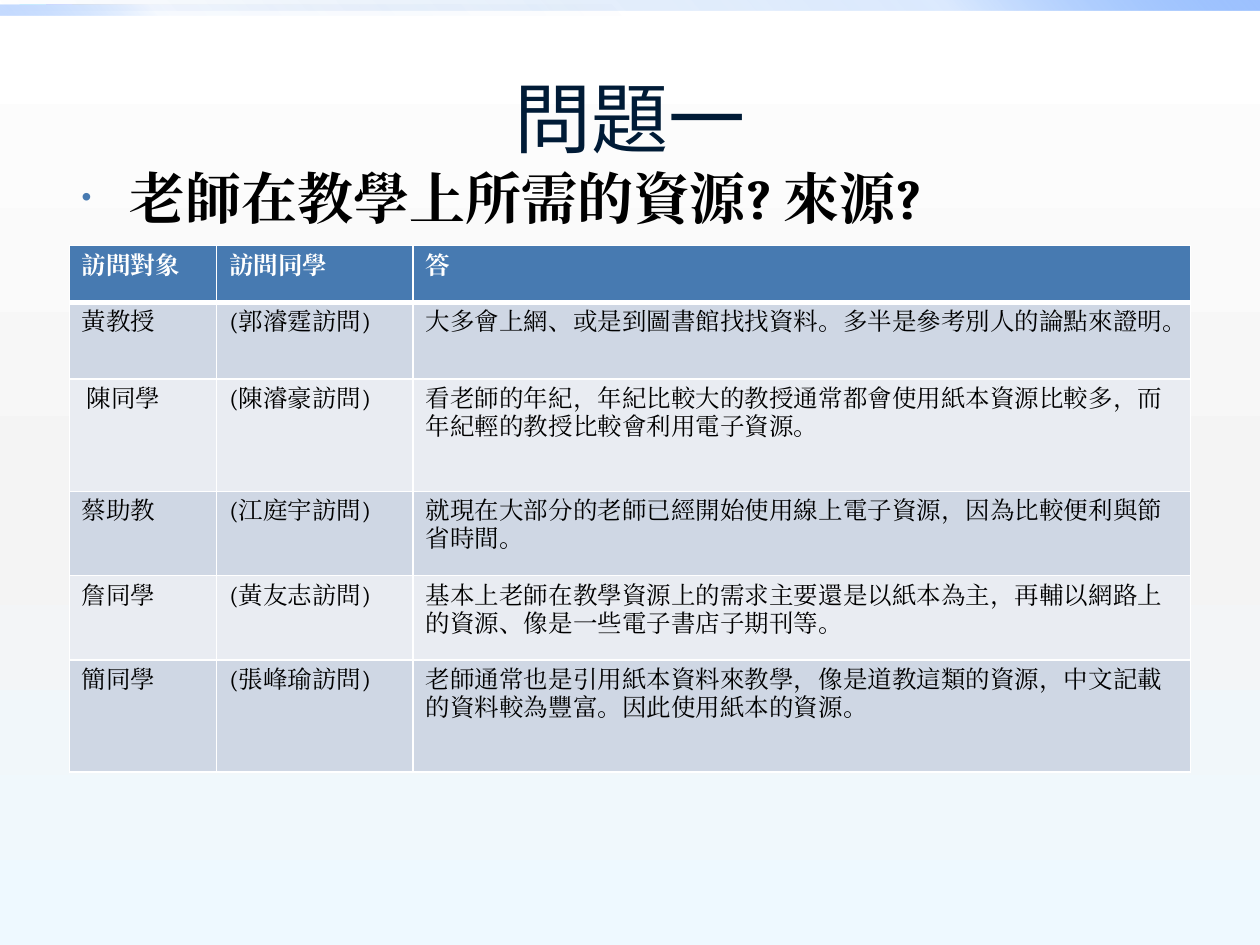
from lxml import etree
from pptx import Presentation
from pptx.dml.color import RGBColor
from pptx.enum import shapes, text
from pptx.oxml.ns import qn
from pptx.util import Inches, Pt

HEAD = ["訪問對象", "訪問同學", "答"]
ROWS = [
    ["黃教授", "(郭濬霆訪問)", "大多會上網、或是到圖書館找找資料。多半是參考別人的論點來證明。"],
    ["陳同學", "(陳濬豪訪問)", "看老師的年紀，年紀比較大的教授通常都會使用紙本資源比較多，而年紀輕的教授比較會利用電子資源。"],
    ["蔡助教", "(江庭宇訪問)", "就現在大部分的老師已經開始使用線上電子資源，因為比較便利與節省時間。"],
    ["詹同學", "(黃友志訪問)", "基本上老師在教學資源上的需求主要還是以紙本為主，再輔以網路上的資源、像是一些電子書店子期刊等。"],
    ["簡同學", "(張峰瑜訪問)", "老師通常也是引用紙本資料來教學，像是道教這類的資源，中文記載的資料較為豐富。因此使用紙本的資源。"],
]
WIDTHS = [1.17, 1.56, 6.17]
HEIGHTS = [0.45, 0.61, 0.89, 0.67, 0.67, 0.89]


def color(code):
    return RGBColor.from_string(code)


def add(parent, tag, **attrs):
    return etree.SubElement(parent, qn(tag), attrs)


def blend(owner, stops, angle):
    owner.fill.gradient()
    root = owner._element if hasattr(owner, "_element") else owner._cSld
    grad = root.find(".//" + qn("a:gradFill"))
    items = grad.find(qn("a:gsLst"))
    for old in list(items):
        items.remove(old)
    for place, code, alpha in stops:
        stop = add(items, "a:gs", pos=str(place * 1000))
        tint = add(stop, "a:srgbClr", val=code)
        if alpha < 100:
            add(tint, "a:alpha", val=str(alpha * 1000))
    grad.find(qn("a:lin")).set("ang", str(angle * 60000))


def style(para, size, face, code, bold=False):
    font = para.font
    font.size, font.name, font.bold = Pt(size), face, bold
    font.color.rgb = color(code)
    add(font._element, "a:ea", typeface=face)


def band(slide, left, top, width, height, stops, angle):
    bar = slide.shapes.add_shape(
        shapes.MSO_SHAPE.RECTANGLE,
        Inches(left), Inches(top), Inches(width), Inches(height))
    bar.shadow.inherit = False
    bar.line.fill.background()
    blend(bar, stops, angle)


def label(slide, left, top, width, height, words):
    box = slide.shapes.add_textbox(
        Inches(left), Inches(top), Inches(width), Inches(height))
    frame = box.text_frame
    frame.word_wrap = True
    frame.text = words
    return frame, frame.paragraphs[0]


def title(slide, left, top, width, height):
    frame, para = label(slide, left, top, width, height, "問題一")
    frame.vertical_anchor = text.MSO_ANCHOR.MIDDLE
    para.alignment = text.PP_ALIGN.CENTER
    style(para, 44, "Roboto", "001B36")


def topic(slide, left, top, width, height):
    para = label(slide, left, top, width, height, "老師在教學上所需的資源? 來源?")[1]
    props = para._p.get_or_add_pPr()
    props.set("marL", str(Inches(0.38)))
    props.set("indent", str(Inches(-0.38)))
    add(add(props, "a:buClr"), "a:srgbClr", val="477AB1")
    add(props, "a:buSzPct", val="50000")
    add(props, "a:buFont", typeface="Arial")
    add(props, "a:buChar", char="•")
    style(para, 32, "Cambria", "000000", True)


def edge(cell, head):
    props = cell._tc.get_or_add_tcPr()
    for spot, side in enumerate("LRTB"):
        wide = 3 if head and side == "B" else 1
        line = etree.Element(qn("a:ln" + side), w=str(Pt(wide)))
        add(add(line, "a:solidFill"), "a:srgbClr", val="FFFFFF")
        props.insert(spot, line)


def grid(slide, left, top):
    table = slide.shapes.add_table(
        len(ROWS) + 1, len(HEAD), Inches(left), Inches(top),
        Inches(sum(WIDTHS)), Inches(sum(HEIGHTS))).table
    for col, width in zip(table.columns, WIDTHS):
        col.width = Inches(width)
    for row, height in zip(table.rows, HEIGHTS):
        row.height = Inches(height)
    for r, words in enumerate([HEAD] + ROWS):
        head = r == 0
        shade = "477AB1" if head else ("E9ECF2", "CFD7E4")[r % 2]
        for c, word in enumerate(words):
            cell = table.cell(r, c)
            cell.text = word
            cell.fill.solid()
            cell.fill.fore_color.rgb = color(shade)
            edge(cell, head)
            style(cell.text_frame.paragraphs[0], 14, "Cambria",
                  "FFFFFF" if head else "000000", head)
    table.cell(2, 0).margin_left = Inches(0.14)


def main():
    deck = Presentation()
    deck.slide_width, deck.slide_height = Inches(10), Inches(7.5)
    slide = deck.slides.add_slide(deck.slide_layouts[6])
    blend(slide.background,
          [(0, "FFFFFF", 100), (55, "F4F4F4", 100), (100, "EEF9FF", 100)], 90)
    band(slide, 0, 0, 10, 0.08,
         [(0, "0058B7", 0), (75, "4F95FF", 20), (100, "9EC2FF", 100)], 315)
    band(slide, 0, 0.04, 5, 0.08,
         [(0, "0058B7", 0), (75, "4F95FF", 5), (100, "9EC2FF", 60)], 135)
    title(slide, 0.5, 0.3, 9, 1.25)
    topic(slide, 0.55, 1.25, 9, 4.95)
    grid(slide, 0.55, 1.95)
    deck.save("out.pptx")


if __name__ == "__main__":
    main()
